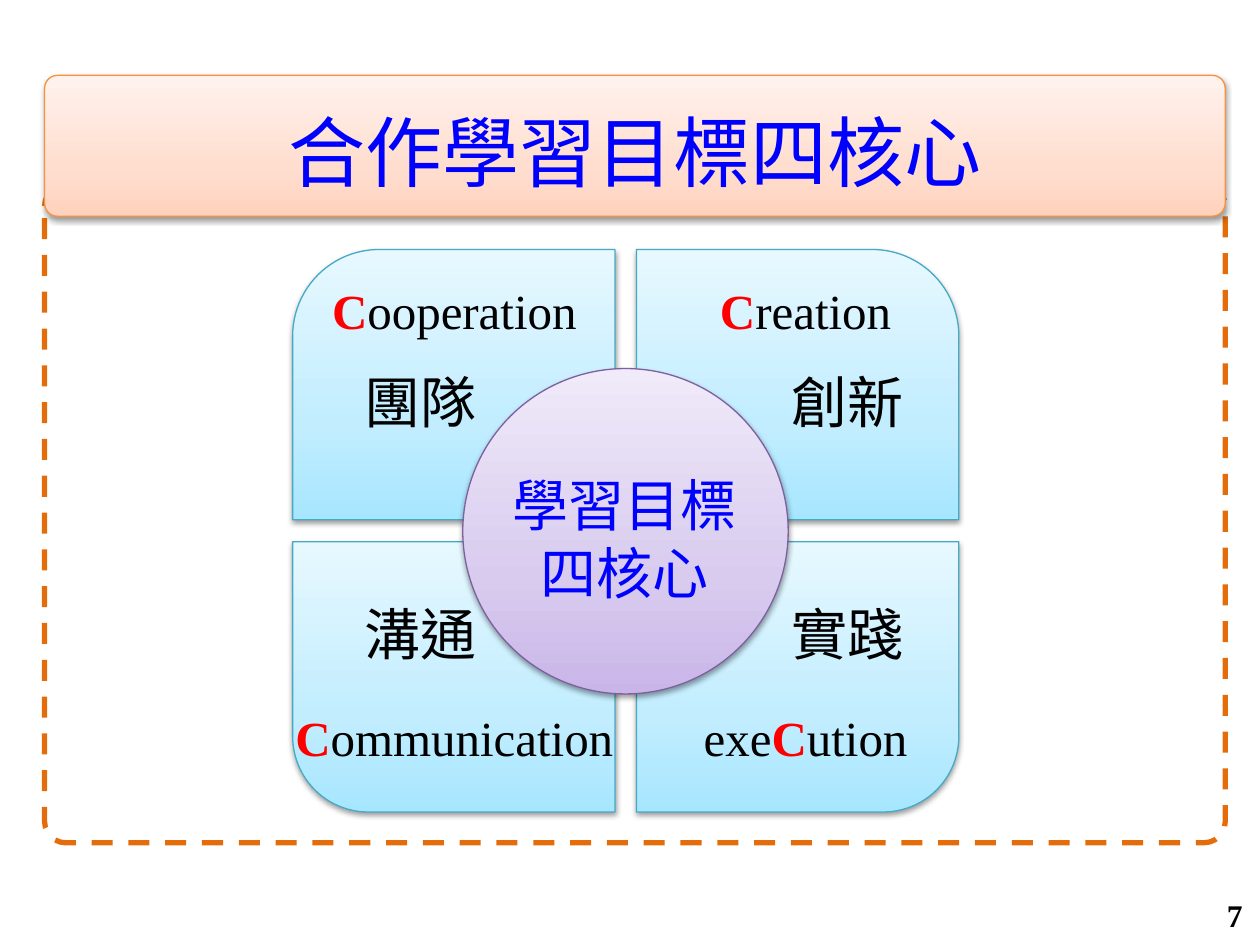
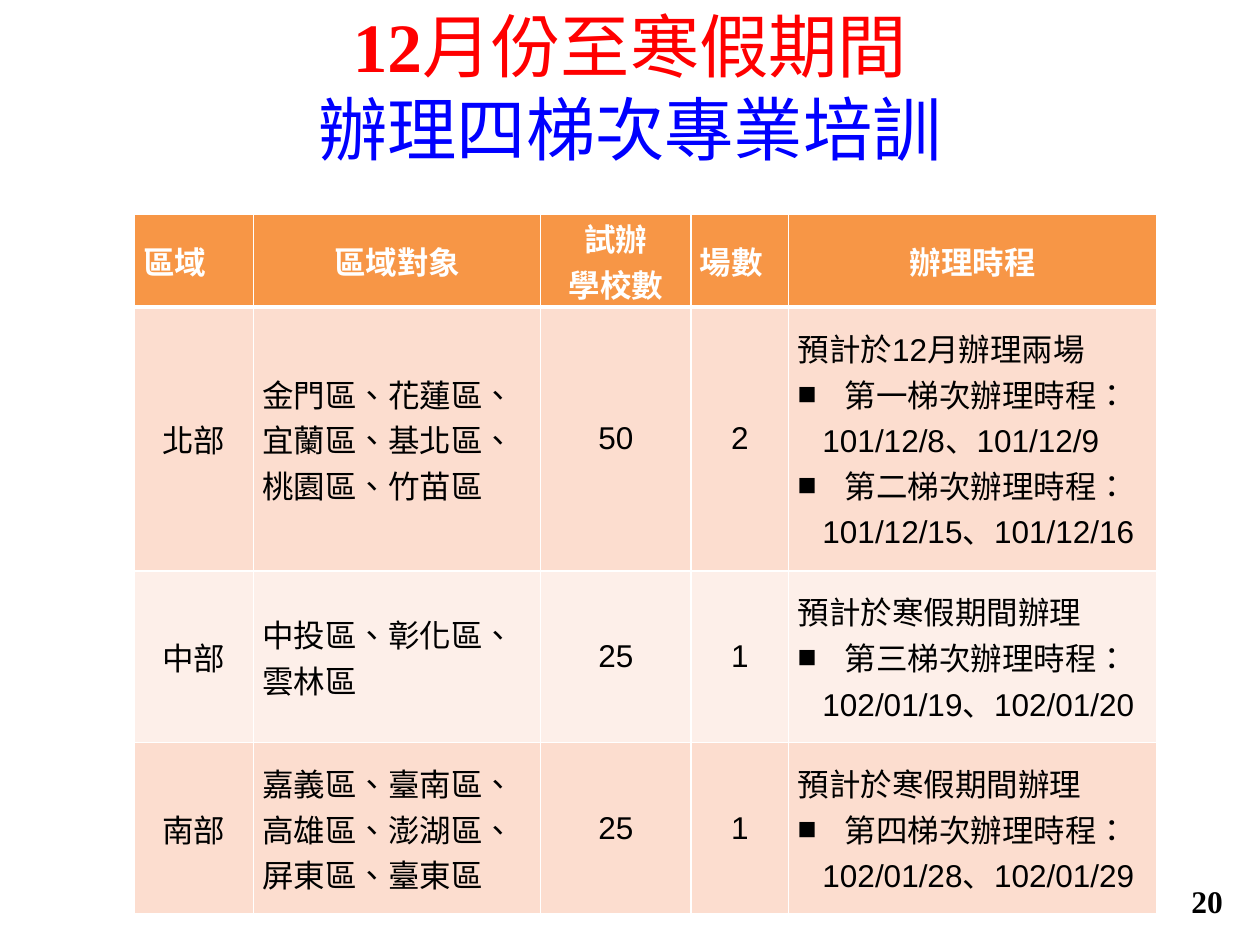
"""Build two slides: the four cores of cooperative learning and the training timetable."""
from pptx import Presentation
from pptx import util as u
from pptx.dml import color
from pptx.enum import dml, shapes, text
from pptx.oxml import ns, parse_xml
from lxml import etree

BLUE, RED, BLACK, WHITE = "0000FF", "FF0000", "000000", "FFFFFF"
SERIF, SANS, HAN = "Times New Roman", "Arial", "Noto Sans CJK SC"
SIDES = {"c": text.PP_ALIGN.CENTER, "l": text.PP_ALIGN.LEFT,
         "r": text.PP_ALIGN.RIGHT, "j": text.PP_ALIGN.JUSTIFY}
KIND = shapes.MSO_SHAPE
MID, LOW = text.MSO_ANCHOR.MIDDLE, text.MSO_ANCHOR.BOTTOM


def hue(code):
    """Turn a hex string into a colour."""
    return color.RGBColor.from_string(code)


def write(frame, lines, side="c", **form):
    """Fill a frame with lines, each a list of (words, colour, changes)."""
    frame.word_wrap = True
    for num, line in enumerate(lines):
        para = frame.add_paragraph() if num else frame.paragraphs[0]
        para.alignment = SIDES[side]
        for words, shade, change in line:
            run = para.add_run()
            run.text = words
            run.font.color.rgb = hue(shade)
            for key, val in {"bold": False, **form, **change}.items():
                setattr(run.font, key, val)
            props = run.font._element
            props.set("lang", "zh-TW")
            etree.SubElement(props, ns.qn("a:ea")).set("typeface", HAN)


deck = Presentation()
deck.slide_width, deck.slide_height = u.Cm(25.4), u.Cm(19.05)
core, plan = [deck.slides.add_slide(deck.slide_layouts[5]) for _ in range(2)]

# Shared titles and page numbers
bold = {"bold": True}
heads = [
    (core, (0.94, 1.96, 23.75, 2.13), LOW, 44,
     [[("合作學習目標四核心", BLUE, {})]]),
    (plan, (0, 0.15, 25.4, 3.18), MID, 39.6,
     [[("12", RED, {"name": SERIF, "bold": True}), ("月份至寒假期間", RED, {})],
      [("辦理四梯次專業培訓", BLUE, {})]]),
]
for page, spot, hold, size, lines in heads:
    title = page.shapes.title
    for key, val in zip(("left", "top", "width", "height"), spot):
        setattr(title, key, u.Cm(val))
    title.text_frame.auto_size = text.MSO_AUTO_SIZE.NONE
    title.text_frame.vertical_anchor = hold
    write(title.text_frame, lines, name=HAN, size=u.Pt(size))

for page, num, left, top in ((core, "7", 19.38, 17.93), (plan, "20", 18.98, 17.65)):
    box = page.shapes.add_textbox(*map(u.Cm, (left, top, 5.92, 1.02)))
    box.text_frame.vertical_anchor = MID
    write(box.text_frame, [[(num, BLACK, bold)]], "r", name=SERIF, size=u.Pt(18))

# Four cores: frame, band, petals and hub
edge = core.shapes.add_shape(KIND.ROUNDED_RECTANGLE, *map(u.Cm, (0.9, 3.73, 23.8, 13.26)))
edge.adjustments[0] = 0.032
edge.shadow.inherit = False
edge.fill.solid()
edge.fill.fore_color.rgb = hue(WHITE)
edge.line.color.rgb = hue("E46C0A")
edge.line.width = u.Pt(3)
edge.line.dash_style = dml.MSO_LINE.DASH

peach = ("FFD2BD", "FFDED0", "FFF2ED", "F69240")
sky = ("A7E6FF", "C1EDFF", "E7F8FF", "46AAC5")
lilac = ("C9B5E8", "D8CBEE", "F0EAF9", "7D60A0")
parts = [(KIND.ROUNDED_RECTANGLE, (0.9, 1.52, 23.8, 2.84), (0.091,), peach)]
for row, bend in enumerate((0.32, 0.28)):
    for col in range(2):
        turn = (bend, 0) if row == col else (0, bend)
        spot = (5.9 + 6.93 * col, 5.03 + 5.89 * row, 6.5, 5.45)
        parts.append((KIND.ROUND_2_DIAG_RECTANGLE, spot, turn, sky))
parts.append((KIND.OVAL, (9.33, 7.43, 6.56, 6.56), (), lilac))

for kind, spot, turns, tones in parts:
    part = core.shapes.add_shape(kind, *map(u.Cm, spot))
    for num, turn in enumerate(turns):
        part.adjustments[num] = turn
    stops = "".join(f'<a:gs pos="{pos}"><a:srgbClr val="{tone}"/></a:gs>'
                    for pos, tone in zip((0, 35000, 100000), tones))
    props = part.element.spPr
    props.find(ns.qn("a:prstGeom")).addnext(parse_xml(
        f'<a:gradFill {ns.nsdecls("a")} rotWithShape="1"><a:gsLst>{stops}</a:gsLst>'
        '<a:lin ang="16200000" scaled="0"/></a:gradFill>'))
    part.line.color.rgb = hue(tones[3])
    part.line.width = u.Pt(0.75)
    part.shadow.inherit = False
    props.find(ns.qn("a:effectLst")).append(parse_xml(
        f'<a:outerShdw {ns.nsdecls("a")} blurRad="40000" dist="20000" dir="5400000" '
        'rotWithShape="0"><a:srgbClr val="000000"><a:alpha val="38000"/></a:srgbClr>'
        '</a:outerShdw>'))
    if kind == KIND.ROUNDED_RECTANGLE:
        part.element.addnext(core.shapes.title.element)

words = [("", "ooperation", "團隊"), ("", "reation", "創新"),
         ("", "ommunication", "溝通"), ("exe", "ution", "實踐")]
for num, (pre, post, han) in enumerate(words):
    row, col = divmod(num, 2)
    line = [(pre, BLACK, {})] if pre else []
    line += [("C", RED, bold), (post, BLACK, {})]
    labels = [((5.46 + 7.08 * col, 5.54 + 8.6 * row, 7.4, 1.45), line, 28),
              ((6.88 + 8.6 * col, 7.29 + 4.67 * row, 3.2, 1.63),
               [(han, BLACK, {})], 32)]
    for spot, line, size in labels:
        box = core.shapes.add_textbox(*map(u.Cm, spot))
        write(box.text_frame, [line], name=SERIF, size=u.Pt(size))

hub = core.shapes.add_textbox(*map(u.Cm, (9.8, 9.37, 5.6, 3)))
write(hub.text_frame, [[(part, BLUE, {})] for part in ("學習目標", "四核心")],
      name=HAN, size=u.Pt(32))

# Training timetable
rows = [
    (["區域"], ["區域對象"], ["試辦", "學校數"], ["場數"], ["辦理時程"]),
    (["北部"], ["金門區、花蓮區、", "宜蘭區、基北區、", "桃園區、竹苗區"], ["50"], ["2"],
     ["預計於12月辦理兩場", "第一梯次辦理時程：", "101/12/8、101/12/9",
      "第二梯次辦理時程：", "101/12/15、101/12/16"]),
    (["中部"], ["中投區、彰化區、", "雲林區"], ["25"], ["1"],
     ["預計於寒假期間辦理", "第三梯次辦理時程：", "102/01/19、102/01/20"]),
    (["南部"], ["嘉義區、臺南區、", "高雄區、澎湖區、", "屏東區、臺東區"], ["25"], ["1"],
     ["預計於寒假期間辦理", "第四梯次辦理時程：", "102/01/28、102/01/29"]),
]
loose = ("第一", "101/12/8", "第三", "102/01/19")
wides, talls = (2.4, 5.79, 3.03, 1.97, 7.41), (1.87, 5.32, 3.46, 3.46)
fills = ("F79646", "FCDDCF", "FDEFE9", "FCDDCF")
grid = plan.shapes.add_table(4, 5, *map(u.Cm, (2.71, 4.32, sum(wides), sum(talls)))).table
for col, wide in zip(grid.columns, wides):
    col.width = u.Cm(wide)
for row, tall in zip(grid.rows, talls):
    row.height = u.Cm(tall)

pads = {"margin_left": u.Cm(0.18), "margin_right": u.Cm(0.18), "margin_top": 0,
        "margin_bottom": 0, "vertical_anchor": MID}
for y, row in enumerate(rows):
    for x, lines in enumerate(row):
        cell = grid.cell(y, x)
        for key, val in pads.items():
            setattr(cell, key, val)
        props = cell._tc.get_or_add_tcPr()
        for side in "LRTB":
            thick = 3 if (y, side) in ((0, "B"), (1, "T")) else 1
            props.append(parse_xml(
                f'<a:ln{side} {ns.nsdecls("a")} w="{u.Pt(thick)}"><a:solidFill>'
                f'<a:srgbClr val="{WHITE}"/></a:solidFill></a:ln{side}>'))
        cell.fill.solid()
        cell.fill.fore_color.rgb = hue(fills[y])
        side = ("jccjc" if y == 0 else "cjccj")[x]
        ink = BLACK if y else WHITE
        write(cell.text_frame, [[(line, ink, {})] for line in lines], side,
              name=SANS, size=u.Pt(18), bold=y == 0)
        if y == 0 or x < 4:
            continue
        for para in cell.text_frame.paragraphs[1:]:
            mark = para.text.startswith("第")
            props = para._p.get_or_add_pPr()
            props.set("marL", str(u.Cm(0.95 if mark else 0.5)))
            props.set("indent", str(u.Cm(-0.95 if mark else 0)))
            if mark:
                etree.SubElement(props, ns.qn("a:buFont")).set("typeface", SANS)
                etree.SubElement(props, ns.qn("a:buChar")).set("char", "■")
            if para.text.startswith(loose):
                para.alignment = SIDES["l"]

deck.save("out.pptx")
